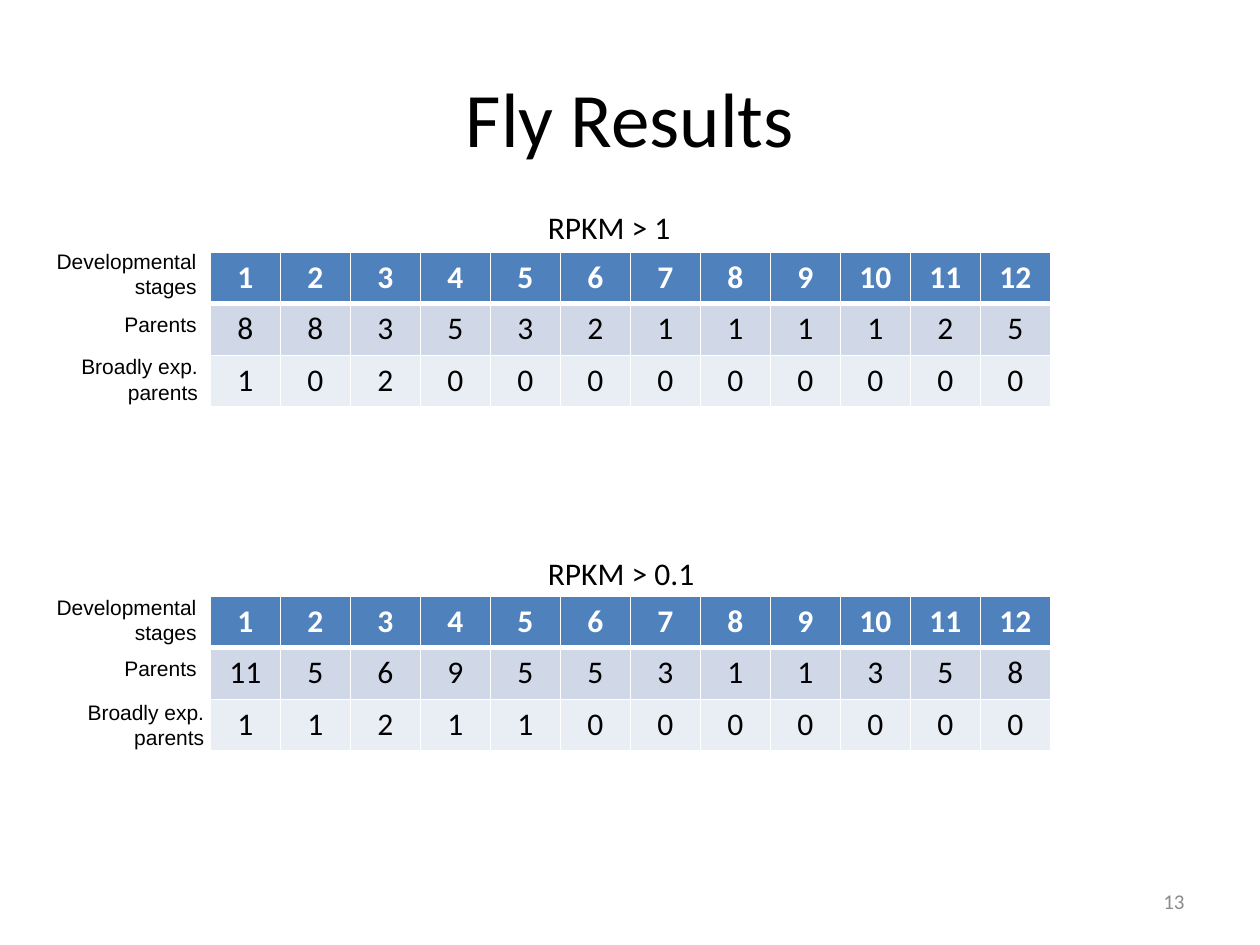
from lxml import etree
from pptx import Presentation
from pptx.dml.color import RGBColor
from pptx.enum import text
from pptx.oxml import ns
from pptx.util import Inches, Pt

COLORS = {
    "black": "000000",
    "white": "FFFFFF",
    "gray": "8C8C8C",
    "header": "4F81BD",
    "band": "D0D8E8",
    "plain": "E9EDF4",
}
LEFT, CENTER, RIGHT = (text.PP_ALIGN.LEFT, text.PP_ALIGN.CENTER,
                       text.PP_ALIGN.RIGHT)
CAPTION = {"size": Pt(18), "name": "Calibri"}
LABEL = {"size": Pt(12), "name": "Arial"}

STAGES = range(1, 13)
TABLE_LEFT, TABLE_WIDTH, ROW_HEIGHT = 1.67, 6.67, 0.41

# One entry per threshold; each label is (lines, left, top, width, height)
BLOCKS = [
    {
        "caption": ("RPKM > 1", 4.25, 1.6, 1.36, 0.4),
        "top": 2,
        "parents": [8, 8, 3, 5, 3, 2, 1, 1, 1, 1, 2, 5],
        "broad": [1, 0, 2] + [0] * 9,
        "labels": [
            ("Developmental\nstages", 0.33, 1.92, 1.33, 0.5),
            ("Parents", 0.88, 2.42, 0.78, 0.3),
            ("Broadly exp.\nparents", 0.53, 2.76, 1.14, 0.5),
        ],
    },
    {
        "caption": ("RPKM > 0.1", 4.25, 4.35, 1.57, 0.4),
        "top": 4.73,
        "parents": [11, 5, 6, 9, 5, 5, 3, 1, 1, 3, 5, 8],
        "broad": [1, 1, 2, 1, 1] + [0] * 7,
        "labels": [
            ("Developmental\nstages", 0.33, 4.67, 1.33, 0.5),
            ("Parents", 0.88, 5.15, 0.78, 0.3),
            ("Broadly exp.\nparents", 0.58, 5.5, 1.14, 0.5),
        ],
    },
]


def write(tf, content, font, color="black", align=LEFT):
    """Write one formatted paragraph per line of content."""
    for i, line in enumerate(content.split("\n")):
        p = tf.add_paragraph() if i else tf.paragraphs[0]
        p.alignment = align
        r = p.add_run()
        r.text = line
        for name, value in font.items():
            setattr(r.font, name, value)
        r.font.color.rgb = RGBColor.from_string(COLORS[color])


def add_text(s, content, left, top, width, height, font, color="black",
             align=LEFT, fixed=False):
    """Add a fixed, middle-anchored box or one that fits its text."""
    sp = s.shapes.add_textbox(*map(Inches, (left, top, width, height)))
    tf = sp.text_frame
    tf.word_wrap = fixed
    if fixed:
        tf.vertical_anchor = text.MSO_ANCHOR.MIDDLE
    else:
        tf.auto_size = text.MSO_AUTO_SIZE.SHAPE_TO_FIT_TEXT
    write(tf, content, font, color, align)


def set_borders(cell, **widths):
    """Draw white borders; widths in points by side (L, R, T, B)."""
    tc_pr = cell._tc.get_or_add_tcPr()
    for side, width in widths.items():
        ln = etree.SubElement(tc_pr, ns.qn(f"a:ln{side}"), w=str(Pt(width)))
        fill = etree.SubElement(ln, ns.qn("a:solidFill"))
        etree.SubElement(fill, ns.qn("a:srgbClr"), val=COLORS["white"])


def add_stage_table(s, top, rows):
    """Add a table with a header row and two count rows."""
    size = (TABLE_LEFT, top, TABLE_WIDTH, ROW_HEIGHT * len(rows))
    table = s.shapes.add_table(len(rows), len(STAGES),
                               *map(Inches, size)).table
    for i, (values, fill) in enumerate(zip(rows, ("header", "band", "plain"))):
        table.rows[i].height = Inches(ROW_HEIGHT)
        for j, value in enumerate(values):
            cell = table.cell(i, j)
            set_borders(cell, L=1, R=1, T=3 if i == 1 else 1,
                        B=3 if i == 0 else 1)
            cell.fill.solid()
            cell.fill.fore_color.rgb = RGBColor.from_string(COLORS[fill])
            write(cell.text_frame, str(value), {**CAPTION, "bold": i == 0},
                  "black" if i else "white", CENTER)


def main():
    prs = Presentation()
    prs.slide_width, prs.slide_height = Inches(10), Inches(7.5)
    s = prs.slides.add_slide(prs.slide_layouts[6])

    # Title and slide number
    add_text(s, "Fly Results", 0.5, 0.3, 9, 1.25,
             {"size": Pt(44), "name": "Calibri"}, align=CENTER, fixed=True)
    add_text(s, "13", 7.17, 6.95, 2.33, 0.4,
             {"size": Pt(12), "name": "Calibri"}, "gray", RIGHT, fixed=True)

    # Captioned tables with row labels
    for block in BLOCKS:
        add_stage_table(s, block["top"],
                        [STAGES, block["parents"], block["broad"]])
        add_text(s, *block["caption"], CAPTION)
        for label in block["labels"]:
            add_text(s, *label, LABEL, align=RIGHT)

    prs.save("out.pptx")


if __name__ == "__main__":
    main()
